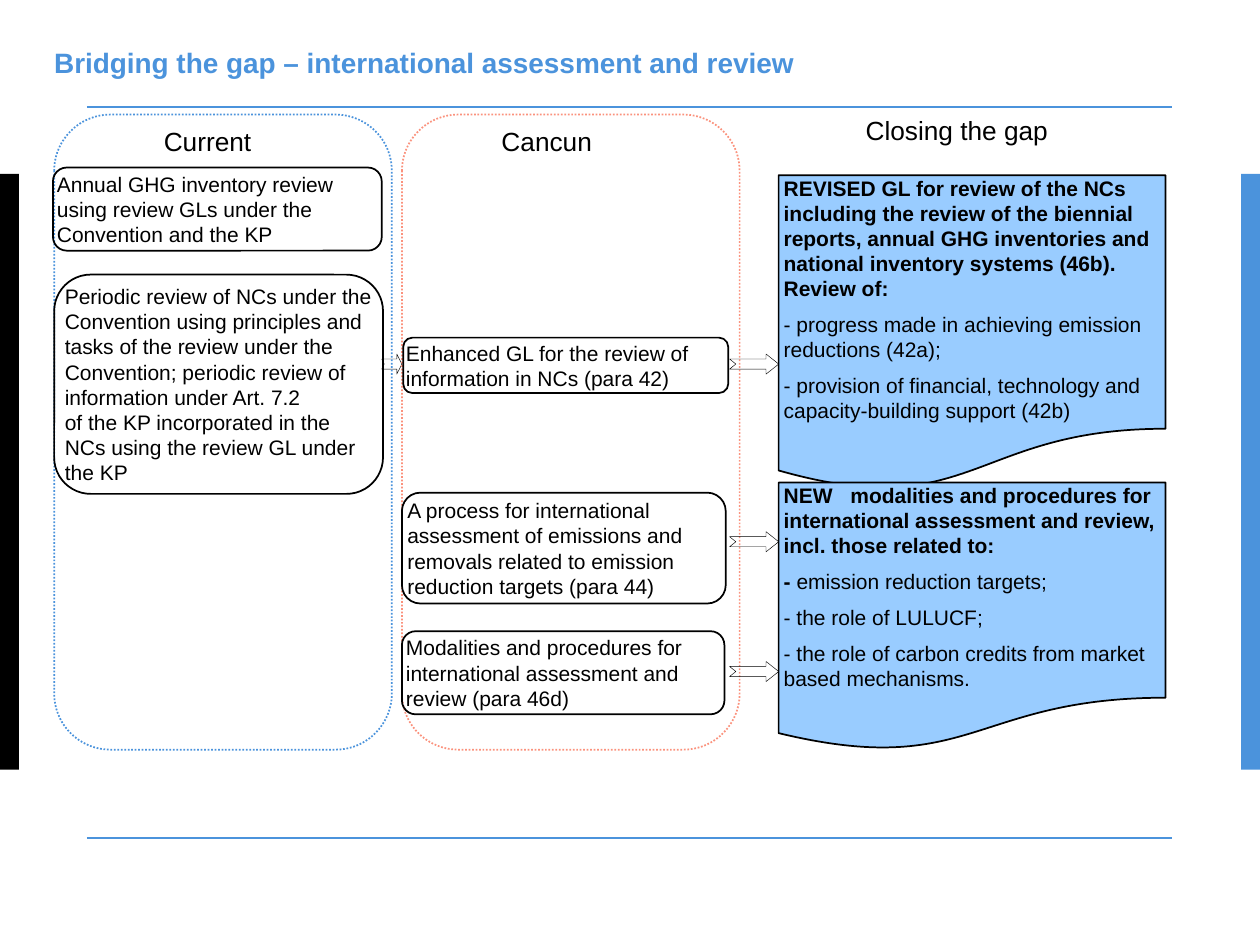
"""Build the slide on bridging the gap in international assessment and review."""
from dataclasses import dataclass

from lxml.etree import SubElement
from pptx import Presentation
from pptx.dml.color import RGBColor
from pptx.enum.dml import MSO_LINE
from pptx.enum.shapes import MSO_CONNECTOR, MSO_SHAPE
from pptx.enum.text import MSO_ANCHOR, MSO_AUTO_SIZE, PP_ALIGN
from pptx.oxml.ns import qn
from pptx.util import Inches, Pt


@dataclass(frozen=True)
class Theme:
    font: str = "Arial"
    ink: RGBColor = RGBColor(0x00, 0x00, 0x00)
    blue: RGBColor = RGBColor(0x4B, 0x93, 0xDC)
    coral: RGBColor = RGBColor(0xFB, 0x92, 0x7D)
    sky: RGBColor = RGBColor(0x99, 0xCC, 0xFF)
    title: Pt = Pt(16)
    heading: Pt = Pt(15)
    body: Pt = Pt(12)
    gap: Pt = Pt(6)
    outline: Pt = Pt(1)
    hairline: Pt = Pt(0.25)


theme = Theme()
prs = Presentation()
prs.slide_width, prs.slide_height = Inches(10), Inches(7.5)
slide = prs.slides.add_slide(prs.slide_layouts[5])


def add_figure(kind, bounds, fill=None, line=None, weight=theme.outline):
    figure = slide.shapes.add_shape(kind, *map(Inches, bounds))
    figure.shadow.inherit = False
    if fill is None:
        figure.fill.background()
    else:
        figure.fill.solid()
        figure.fill.fore_color.rgb = fill
    if line is None:
        figure.line.fill.background()
    else:
        figure.line.color.rgb = line
        figure.line.width = weight
    return figure


def write(holder, paragraphs, size, color=theme.ink, bold=False, anchor=MSO_ANCHOR.MIDDLE,
          wrap=True, inset=0, gap=0):
    frame = holder.text_frame
    frame.auto_size = MSO_AUTO_SIZE.NONE
    frame.word_wrap = wrap
    frame.vertical_anchor = anchor
    frame.margin_left = Inches(inset)
    frame.margin_top = frame.margin_right = frame.margin_bottom = 0
    frame.text = "\n".join(paragraphs)
    for position, paragraph in enumerate(frame.paragraphs):
        paragraph.alignment = PP_ALIGN.LEFT
        if position and gap:
            paragraph.space_before = gap
        for run in paragraph.runs:
            run.font.name = theme.font
            run.font.size = size
            run.font.color.rgb = color
            run.font.bold = bold
    return frame


for left, color in ((0, theme.ink), (9.85, theme.blue)):
    add_figure(MSO_SHAPE.RECTANGLE, (left, 1.38, 0.15, 4.73), fill=color)

for top in (0.85, 6.65):
    rule = slide.shapes.add_connector(
        MSO_CONNECTOR.STRAIGHT, Inches(0.69), Inches(top), Inches(9.3), Inches(top))
    rule.line.color.rgb = theme.blue
    rule.line.width = theme.outline
    SubElement(rule._element.spPr, qn("a:effectLst"))

title = slide.shapes.title
title.left, title.top, title.width, title.height = map(Inches, (0.43, 0.21, 9.21, 0.63))
heading = write(title, ["Bridging the gap – international assessment and review"],
                theme.title, theme.blue, bold=True)
heading.paragraphs[0].line_spacing = Pt(15)

review_link = add_figure(MSO_SHAPE.NOTCHED_RIGHT_ARROW, (3.03, 2.81, 0.16, 0.16),
                         line=theme.ink, weight=theme.hairline)
review_link.adjustments[1] = 0.25

for left, color in ((3.19, theme.coral), (0.43, theme.blue)):
    column = add_figure(MSO_SHAPE.FLOWCHART_ALTERNATE_PROCESS, (left, 0.91, 2.68, 5.04), line=color)
    column.line.dash_style = MSO_LINE.ROUND_DOT

for text, left, top, width in (
    ("Current", 1.3, 0.99, 0.7),
    ("Cancun", 3.98, 0.99, 0.78),
    ("Closing the gap", 6.87, 0.91, 1.45),
):
    label = slide.shapes.add_textbox(*map(Inches, (left, top, width, 0.25)))
    write(label, [text], theme.heading, anchor=MSO_ANCHOR.TOP, wrap=False)

steps = (
    ((0.42, 1.33, 2.61, 0.66),
     ["Annual GHG inventory review using review GLs under the Convention and the KP"]),
    ((0.43, 2.18, 2.61, 1.74),
     ["Periodic review of NCs under the Convention using principles and tasks of the review "
      "under the Convention; periodic review of information under Art. 7.2",
      "of the KP incorporated in the NCs using the review GL under the KP"]),
    ((3.2, 2.68, 2.58, 0.44),
     ["Enhanced GL for the review of information in NCs (para 42)"]),
    ((3.19, 3.91, 2.57, 0.88),
     ["A process for international assessment of emissions and removals related to emission "
      "reduction targets (para 44)"]),
    ((3.19, 5.01, 2.56, 0.66),
     ["Modalities and procedures for international assessment and review (para 46d)"]),
)
for bounds, paragraphs in steps:
    step = add_figure(MSO_SHAPE.FLOWCHART_ALTERNATE_PROCESS, bounds, line=theme.ink)
    write(step, paragraphs, theme.body)

outcomes = (
    (1.39, 2.51,
     ["REVISED GL for review of the NCs including the review of the biennial reports, annual GHG "
      "inventories and national inventory systems (46b). Review of:",
      "- progress made in achieving emission reductions (42a);",
      "- provision of financial, technology and capacity-building support (42b)"]),
    (3.83, 2.13,
     ["NEW\tmodalities and procedures for international assessment and review, incl. those "
      "related to:",
      "- emission reduction targets;",
      "- the role of LULUCF;",
      "- the role of carbon credits from market based mechanisms."]),
)
for top, height, paragraphs in outcomes:
    outcome = add_figure(MSO_SHAPE.FLOWCHART_DOCUMENT, (6.18, top, 3.07, height),
                         fill=theme.sky, line=theme.ink)
    outcome_text = write(outcome, paragraphs, theme.body, anchor=MSO_ANCHOR.TOP,
                         inset=0.04, gap=theme.gap)
    outcome_text.paragraphs[0].runs[0].font.bold = True

modalities = outcome_text.paragraphs[0]
tab_list = SubElement(modalities._p.get_or_add_pPr(), qn("a:tabLst"))
SubElement(tab_list, qn("a:tab"), pos=str(Inches(0.53)), algn="l")

targets = outcome_text.paragraphs[1]
dash = targets.runs[0]
dash.text = "- "
dash.font.bold = True
target_text = targets.add_run()
target_text.text = "emission reduction targets;"
target_text.font.name = theme.font
target_text.font.size = theme.body
target_text.font.color.rgb = theme.ink
target_text.font.bold = False

for top in (2.81, 4.22, 5.25):
    outcome_link = add_figure(MSO_SHAPE.NOTCHED_RIGHT_ARROW, (5.79, top, 0.39, 0.16),
                              line=theme.ink, weight=theme.hairline)
    outcome_link.adjustments[1] = 0.63

prs.save("out.pptx")
